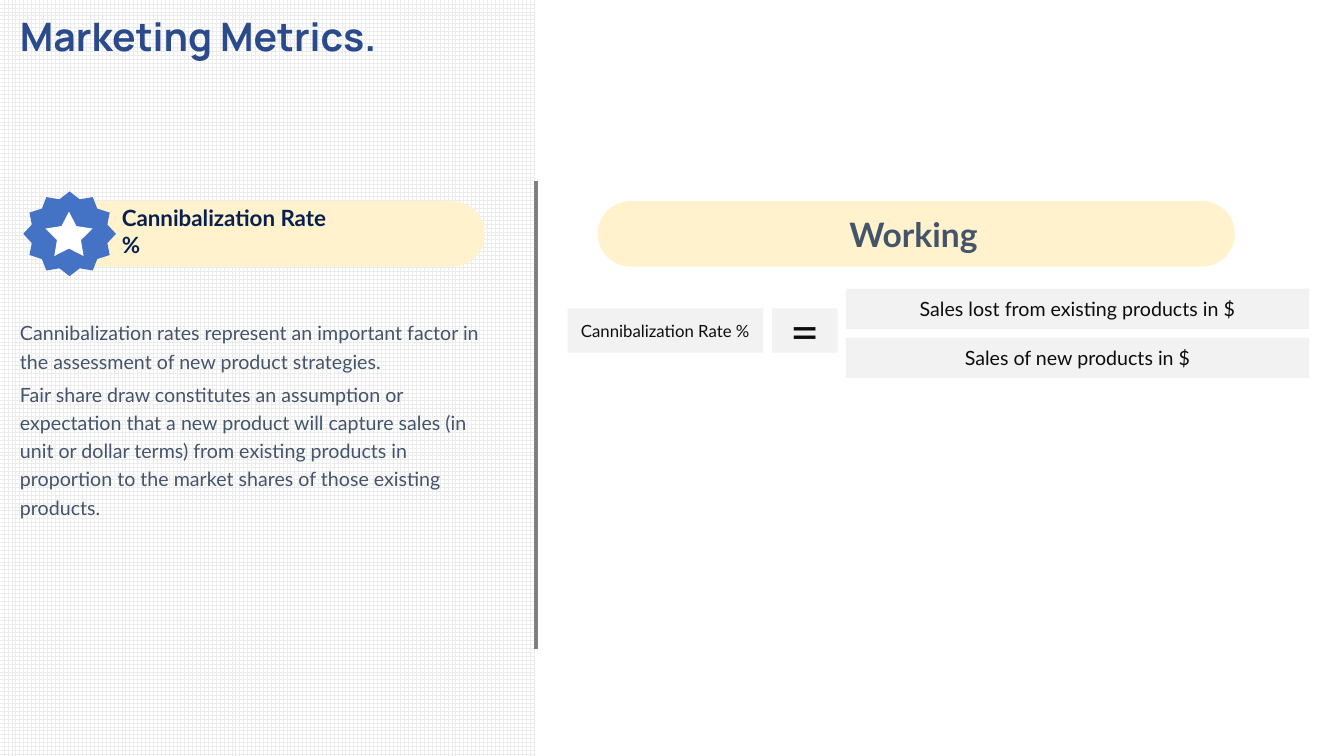
from lxml.etree import SubElement
from pptx import Presentation
from pptx.dml.color import RGBColor
from pptx.enum.dml import MSO_PATTERN
from pptx.enum.shapes import MSO_CONNECTOR, MSO_SHAPE
from pptx.enum.text import MSO_ANCHOR, PP_ALIGN
from pptx.oxml.ns import qn
from pptx.util import Pt

TITLE = "Marketing Metrics."
METRIC = "Cannibalization Rate %"
DESCRIPTION = [
    "Cannibalization rates represent an important factor in the assessment "
    "of new product strategies.",
    "Fair share draw constitutes an assumption or expectation that a new "
    "product will capture sales (in unit or dollar terms) from existing "
    "products in proportion to the market shares of those existing products.",
]
WORKING = "Working"
FRACTION = ["Sales lost from existing products in $", "Sales of new products in $"]

WHITE = RGBColor(0xFF, 0xFF, 0xFF)
GRID = RGBColor(0xEC, 0xEC, 0xEC)
GREY = RGBColor(0x80, 0x80, 0x80)
TILE = RGBColor(0xF2, 0xF2, 0xF2)
CREAM = RGBColor(0xFF, 0xF2, 0xCC)
BLUE = RGBColor(0x44, 0x72, 0xC4)
TITLE_BLUE = RGBColor(0x2A, 0x4A, 0x8B)
NAVY = RGBColor(0x08, 0x20, 0x4D)
SLATE = RGBColor(0x44, 0x54, 0x6A)
INK = RGBColor(0x0D, 0x0D, 0x0D)

SLIDE_W, SLIDE_H = 960, 540
PANEL_W = 382.5
PILL_TOP, PILL_H = 143.6, 46.8
TILE_TOP, TILE_H = 220.3, 31.7
FRACTION_LEFT, FRACTION_TOP, FRACTION_W, FRACTION_H = 604.2, 206.2, 331, 28.7
FRACTION_STEP = 35

presentation = Presentation()
presentation.slide_width, presentation.slide_height = Pt(SLIDE_W), Pt(SLIDE_H)
slide = presentation.slides.add_slide(presentation.slide_layouts[6])
shapes = slide.shapes


def add_solid(preset, left, top, width, height, color, adjust=None):
    """Add a borderless preset shape; color None leaves the fill open."""
    solid = shapes.add_shape(preset, Pt(left), Pt(top), Pt(width), Pt(height))
    solid.shadow.inherit = False
    solid.line.fill.background()
    if color is not None:
        solid.fill.solid()
        solid.fill.fore_color.rgb = color
    if adjust is not None:
        solid.adjustments[0] = adjust
    return solid


def write(holder, lines, size, color, font="Lato", bold=False,
          align=PP_ALIGN.LEFT, anchor=MSO_ANCHOR.TOP):
    frame = holder.text_frame
    frame.word_wrap = True
    frame.vertical_anchor = anchor
    frame.text = "\n".join(lines)
    for paragraph in frame.paragraphs:
        paragraph.alignment = align
        paragraph.font.name = font
        paragraph.font.size = Pt(size)
        paragraph.font.bold = bold
        paragraph.font.color.rgb = color
    return frame.paragraphs


def add_text(left, top, width, height, lines, size, color, **style):
    box = shapes.add_textbox(Pt(left), Pt(top), Pt(width), Pt(height))
    return write(box, lines, size, color, **style)


def add_tile(left, top, width, height, label, size):
    tile = add_solid(MSO_SHAPE.RECTANGLE, left, top, width, height, TILE)
    write(tile, [label], size, INK, align=PP_ALIGN.CENTER, anchor=MSO_ANCHOR.MIDDLE)


def add_pill(left, width):
    add_solid(MSO_SHAPE.ROUNDED_RECTANGLE, left, PILL_TOP, width, PILL_H, CREAM, 0.5)


# Left panel: title, metric badge and description
panel = add_solid(MSO_SHAPE.RECTANGLE, 0, 0, PANEL_W, SLIDE_H, None)
panel.fill.patterned()
panel.fill.pattern = MSO_PATTERN.LARGE_GRID
panel.fill.fore_color.rgb = GRID
panel.fill.back_color.rgb = WHITE

add_text(7.2, 5, 304, 41, [TITLE], 28, TITLE_BLUE, font="Manrope", bold=True)
description = add_text(7.2, 222.6, 355.7, 137, DESCRIPTION, 14, SLATE)
for paragraph in description:
    paragraph.line_spacing = 1.2
for paragraph in description[1:]:
    paragraph.space_before = Pt(3.5)

divider = shapes.add_connector(MSO_CONNECTOR.STRAIGHT, Pt(383), Pt(129.6), Pt(383), Pt(463.7))
divider.line.color.rgb = GREY
divider.line.width = Pt(3)
SubElement(divider.line._get_or_add_ln().getparent(), qn("a:effectLst"))

add_pill(28.1, 318.2)
add_solid(MSO_SHAPE.STAR_12_POINT, 16.6, 136.8, 66.2, 60.5, BLUE, 0.422)
add_solid(MSO_SHAPE.STAR_5_POINT, 32.4, 151.2, 33.8, 31.7, WHITE, 0.254)
add_text(79.9, 151.9, 173, 26.6, [METRIC], 16, NAVY, bold=True, anchor=MSO_ANCHOR.MIDDLE)

# Right side: the formula
add_tile(405.4, TILE_TOP, 139.7, TILE_H, METRIC, 12)
add_tile(551.5, TILE_TOP, 46.8, TILE_H, "=", 36)
for row, term in enumerate(FRACTION):
    add_tile(FRACTION_LEFT, FRACTION_TOP + row * FRACTION_STEP,
             FRACTION_W, FRACTION_H, term, 14)

add_pill(427, 455)
add_text(443, 149, 419, 36, [WORKING], 24, SLATE, bold=True,
         align=PP_ALIGN.CENTER, anchor=MSO_ANCHOR.BOTTOM)

presentation.save("out.pptx")
